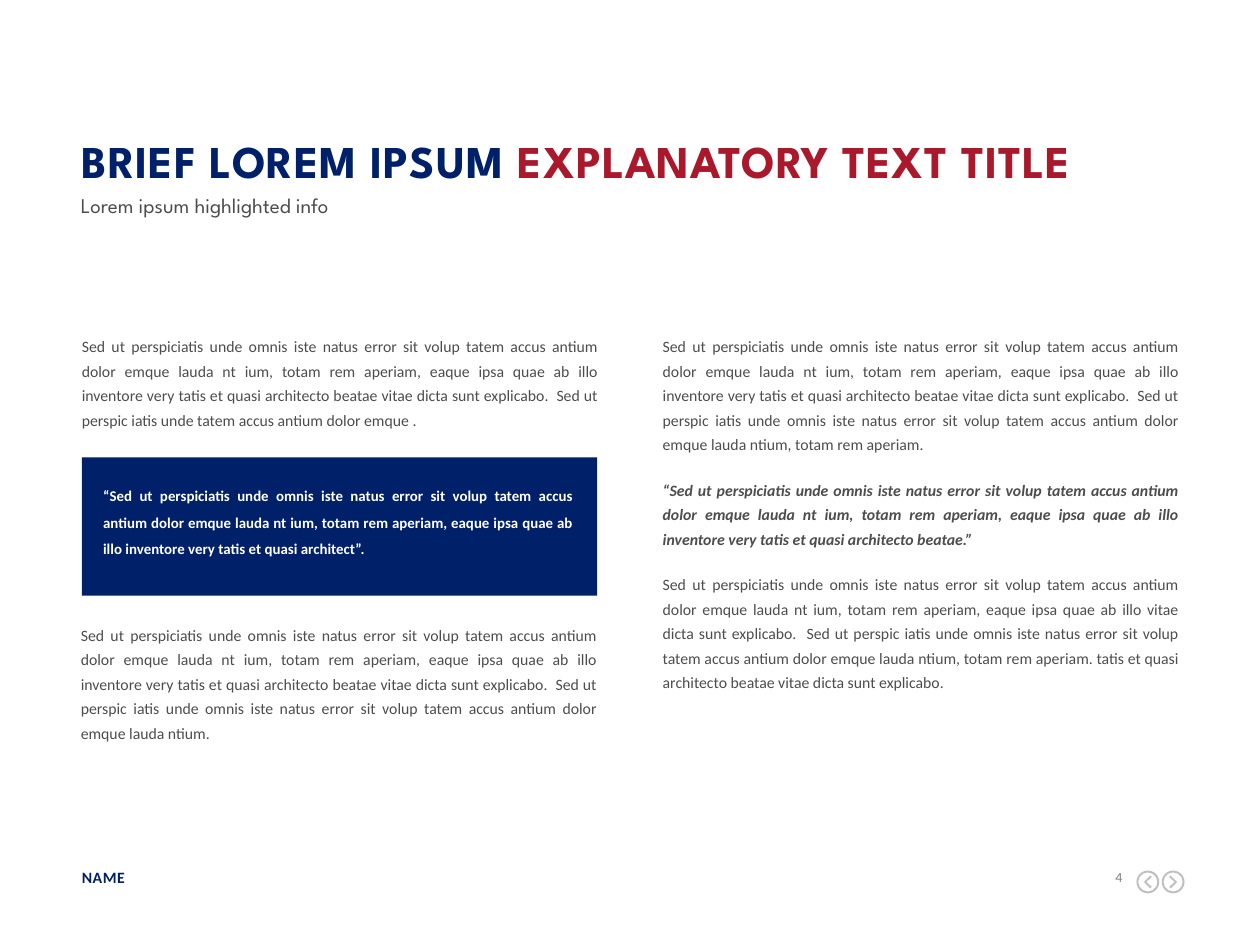
from dataclasses import dataclass

from pptx import Presentation
from pptx import util as u
from pptx.dml import color
from pptx.enum import shapes, text


@dataclass(frozen=True)
class Theme:
    navy: str = "002069"
    red: str = "AA182C"
    body: str = "4D4D4D"
    white: str = "FFFFFF"
    number: str = "808080"
    icon: str = "BFBFBF"
    head_font: str = "League Spartan"
    body_font: str = "Calibri"
    title_size: float = 26
    subtitle_size: float = 12
    body_size: float = 9
    quote_size: float = 8.5
    number_size: float = 8


theme = Theme()


def add_text(page, place, paragraphs, layout, tracking=0):
    box = page.shapes.add_textbox(*map(u.Cm, place))
    frame = box.text_frame
    frame.word_wrap = True
    for side in ("left", "top", "right", "bottom"):
        setattr(frame, f"margin_{side}", 0)
    for index, spans in enumerate(paragraphs):
        para = frame.paragraphs[0] if index == 0 else frame.add_paragraph()
        for name, value in layout.items():
            setattr(para, name, value)
        for words, style in spans:
            span = para.add_run()
            span.text = words
            for name, value in style.items():
                if name == "color":
                    span.font.color.rgb = color.RGBColor.from_string(value)
                else:
                    setattr(span.font, name, value)
            if tracking:
                span.font._element.set("spc", str(tracking))


def paint(shape, fill):
    shape.shadow.inherit = False
    shape.fill.solid()
    shape.fill.fore_color.rgb = color.RGBColor.from_string(fill)
    shape.line.fill.background()


deck = Presentation()
deck.slide_width, deck.slide_height = u.Cm(25.4), u.Cm(19.05)
page = deck.slides.add_slide(deck.slide_layouts[6])

left, right, column = 1.65, 13.36, 10.39
title = {"name": theme.head_font, "size": u.Pt(theme.title_size), "bold": True, "color": theme.navy}
subtitle = {"name": theme.head_font, "size": u.Pt(theme.subtitle_size), "color": theme.body}
body = {"name": theme.body_font, "size": u.Pt(theme.body_size), "color": theme.body}
emphasis = {**body, "bold": True, "italic": True}
quote = {**body, "size": u.Pt(theme.quote_size), "bold": True, "color": theme.white}
footer = {**body, "bold": True, "color": theme.navy}
number = {**body, "size": u.Pt(theme.number_size), "color": theme.number}

justified = {
    "alignment": text.PP_ALIGN.JUSTIFY,
    "line_spacing": u.Pt(14),
    "space_after": u.Pt(12),
}
quoted = {**justified, "line_spacing": u.Pt(15), "space_after": u.Pt(6)}

opening = (
    "Sed ut perspiciatis unde omnis iste natus error sit volup tatem accus antium "
    "dolor emque lauda nt ium, totam rem aperiam, eaque ipsa quae ab illo"
)
architect = f"{opening} inventore very tatis et quasi architect"
explained = f"{architect}o beatae vitae dicta sunt explicabo.  Sed ut perspic iatis unde"
ending = "omnis iste natus error sit volup tatem accus antium dolor emque lauda ntium"

add_text(page, (left, 2.69, 22.1, 1.07), [[
    ("BRIEF LOREM IPSUM ", title),
    ("EXPLANATORY TEXT TITLE", {**title, "color": theme.red}),
]], {}, tracking=50)
add_text(page, (1.63, 3.96, 22.1, 1.07), [[("Lorem ipsum highlighted info", subtitle)]],
         {"line_spacing": u.Pt(12)})

add_text(page, (left, 6.68, column, 1.96),
         [[(f"{explained} tatem accus antium dolor emque .", body)]], justified)
add_text(page, (right, 6.68, column, 7.29), [
    [(f"{explained} {ending}, totam rem aperiam.", body)],
    [(f"“{architect}o beatae.”", emphasis)],
    [(f"{opening} vitae dicta sunt explicabo.  Sed ut perspic iatis unde {ending}, "
      "totam rem aperiam. tatis et quasi architecto beatae vitae dicta sunt explicabo.", body)],
], justified)

panel = page.shapes.add_shape(
    shapes.MSO_SHAPE.RECTANGLE, u.Cm(left), u.Cm(9.22), u.Cm(column), u.Cm(2.79))
paint(panel, theme.navy)
add_text(page, (2.08, 9.65, 9.47, 1.37), [[(f"“{architect}”.", quote)]], quoted)
add_text(page, (1.63, 12.5, column, 2.46), [[(f"{explained} {ending}.", body)]], justified)

add_text(page, (left, 17.5, 4.95, 0.38), [[("NAME", footer)]], {}, tracking=30)
add_text(page, (22.05, 17.5, 0.58, 0.33), [[("4", number)]],
         {"alignment": text.PP_ALIGN.RIGHT}, tracking=30)

diameter, middle = 0.46, 17.78
chevron = [(-0.08, -0.1), (0.03, 0), (-0.08, 0.1), (-0.05, 0.13), (0.08, 0), (-0.05, -0.13)]
for center, direction in ((23.14, -1), (23.65, 1)):
    ring = page.shapes.add_shape(
        shapes.MSO_SHAPE.DONUT, u.Cm(center - diameter / 2), u.Cm(middle - diameter / 2),
        u.Cm(diameter), u.Cm(diameter))
    ring.adjustments[0] = 0.08
    paint(ring, theme.icon)
    points = [(u.Cm(center + direction * x), u.Cm(middle + y)) for x, y in chevron]
    outline = page.shapes.build_freeform(*points[0])
    outline.add_line_segments(points[1:], close=True)
    paint(outline.convert_to_shape(), theme.icon)

deck.save("out.pptx")
